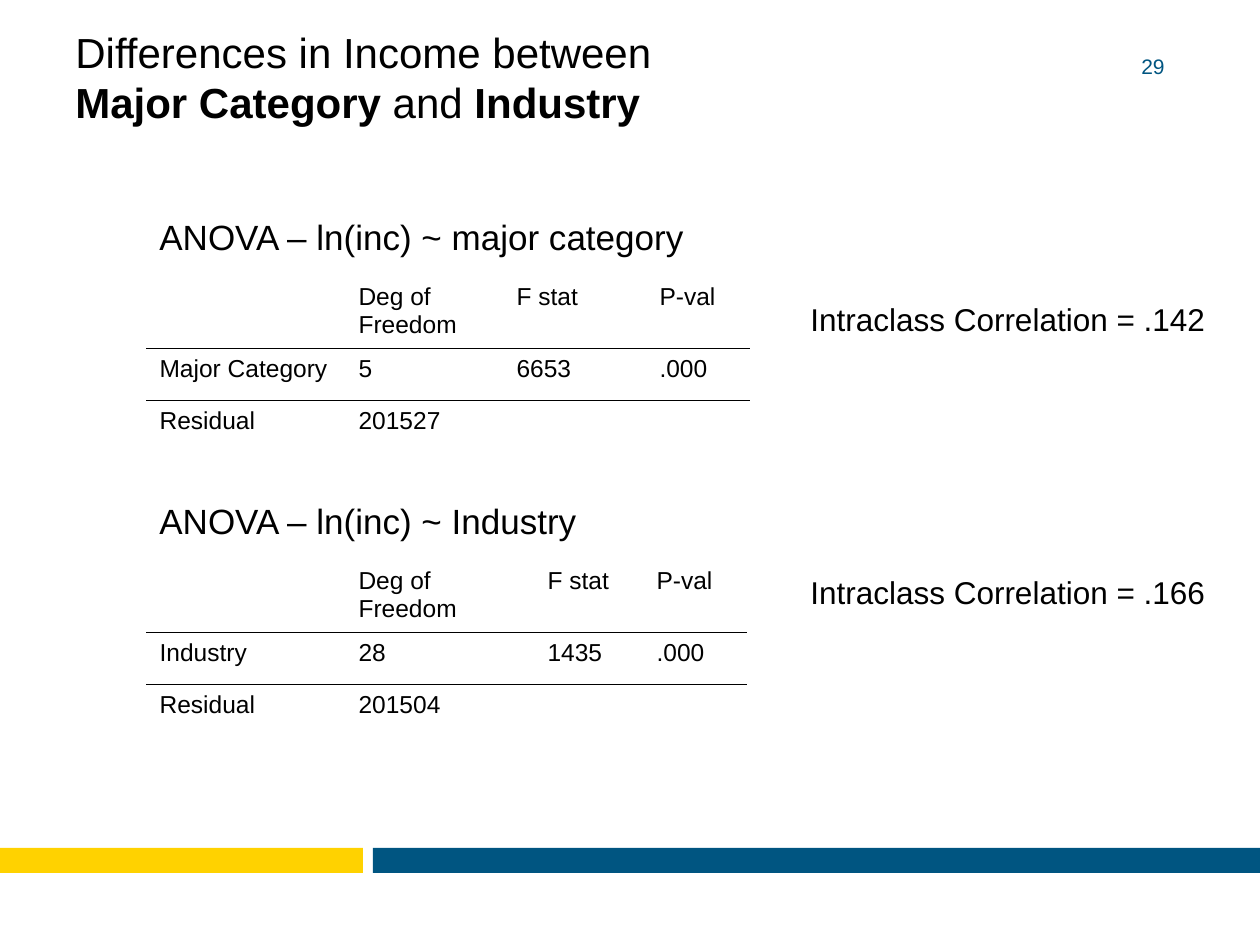
from lxml import etree
from pptx import Presentation
from pptx.dml.color import RGBColor
from pptx.enum.shapes import MSO_SHAPE as SHAPE
from pptx.enum.text import MSO_ANCHOR as ANCHOR, PP_ALIGN as ALIGN
from pptx.oxml import parse_xml
from pptx.oxml.ns import nsdecls
from pptx.util import Emu, Pt

BLACK = RGBColor(0x00, 0x00, 0x00)
BLUE = RGBColor(0x00, 0x55, 0x81)
YELLOW = RGBColor(0xFF, 0xD2, 0x00)
FONT = "Arial"
W, H = 1260, 945
HEADER = ["", "Deg of Freedom", "F stat", "P-val"]


def px(n):
    return Emu(round(n * 914400 / 126))


def style(p, size, color=BLACK):
    for r in p.runs:
        r.font.size, r.font.name = Pt(size), FONT
        r.font.color.rgb = color


def add_text(slide, x, y, w, h, text, size, color=BLACK, align=ALIGN.LEFT, anchor=ANCHOR.TOP):
    tf = slide.shapes.add_textbox(px(x), px(y), px(w), px(h)).text_frame
    tf.word_wrap = True
    tf.vertical_anchor = anchor
    tf.text = text
    p = tf.paragraphs[0]
    p.alignment = align
    style(p, size, color)
    return tf


def add_title(slide, x, y, w, h):
    tf = add_text(slide, x, y, w, h, "Differences in Income between", 24)
    p = tf.add_paragraph()
    for text, bold in [("Major Category ", True), ("and ", False), ("Industry", True)]:
        r = p.add_run()
        r.text, r.font.bold = text, bold
    style(p, 24)


def add_bar(slide, x, y, w, h, color):
    sp = slide.shapes.add_shape(SHAPE.RECTANGLE, px(x), px(y), px(w), px(h))
    sp.shadow.inherit = False
    sp.fill.solid()
    sp.fill.fore_color.rgb = color
    sp.line.fill.background()


def add_rule(cell, side):
    ln = parse_xml(f'<a:{side} {nsdecls("a")} w="{Pt(1)}"/>')
    fill = etree.SubElement(ln, ln.tag.replace(side, "solidFill"))
    etree.SubElement(fill, ln.tag.replace(side, "srgbClr"), val=str(BLACK))
    cell._tc.get_or_add_tcPr().insert(0, ln)


def add_anova_table(slide, x, y, widths, rows):
    heights = [71, 52, 52]
    table = slide.shapes.add_table(len(rows), len(widths), px(x), px(y),
                                   px(sum(widths)), px(sum(heights))).table
    table.first_row = table.horz_banding = False
    for col, w in zip(table.columns, widths):
        col.width = px(w)
    for i, (values, h) in enumerate(zip(rows, heights)):
        table.rows[i].height = px(h)
        for j, value in enumerate(values):
            cell = table.cell(i, j)
            cell.fill.background()
            cell.text = value
            style(cell.text_frame.paragraphs[0], 14)
            if i < len(rows) - 1:
                add_rule(cell, "lnB")
            if i > 0:
                add_rule(cell, "lnT")


def add_anova(slide, x, y, factor, widths, rows, correlation, note_y):
    add_text(slide, x, y, 906, 55, f"ANOVA – ln(inc) ~ {factor}", 20)
    add_anova_table(slide, x, y + 68, widths, [HEADER] + rows)
    add_text(slide, x + 651, y + note_y, 441, 50,
             f"Intraclass Correlation = {correlation}", 18)


def add_footer(slide, y, h):
    add_bar(slide, 373, y, W - 373, h, BLUE)
    add_bar(slide, 0, y, 363, h, YELLOW)


def main():
    prs = Presentation()
    prs.slide_width, prs.slide_height = px(W), px(H)
    s = prs.slides.add_slide(prs.slide_layouts[6])
    add_footer(s, 848, 25)
    add_text(s, 1082, 44, 95, 44, "29", 12, BLUE, ALIGN.RIGHT, ANCHOR.MIDDLE)
    add_title(s, 63, 20, 906, 115)
    add_anova(s, 147, 209, "major category", [199, 158, 143, 102],
              [["Major Category", "5", "6653", ".000"], ["Residual", "201527", "", ""]],
              ".142", 85)
    add_anova(s, 147, 493, "Industry", [199, 189, 109, 102],
              [["Industry", "28", "1435", ".000"], ["Residual", "201504", "", ""]],
              ".166", 74)
    prs.save("out.pptx")


if __name__ == "__main__":
    main()
